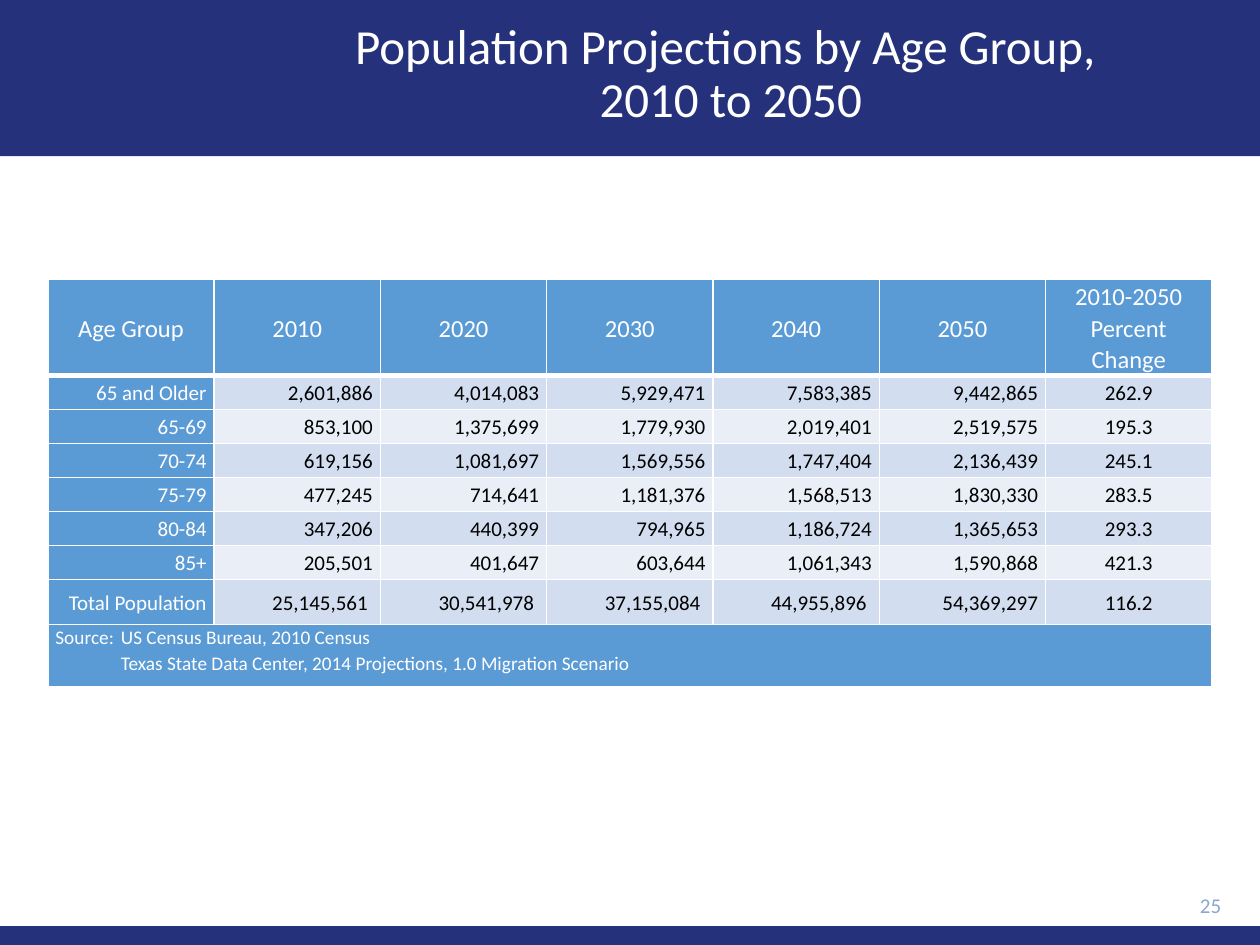
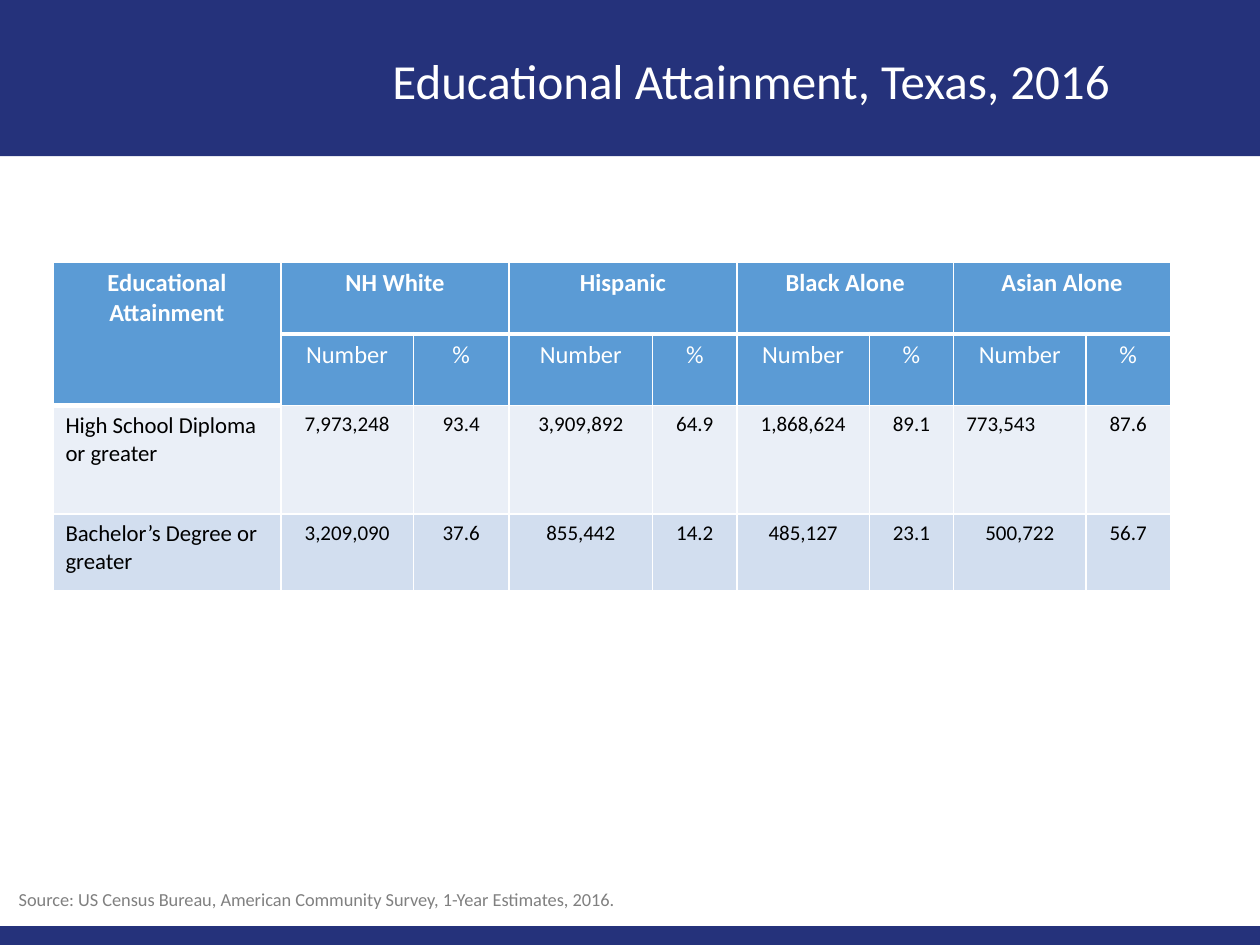
import pptx
import pptx.util
import pptx.dml.color
import pptx.enum.shapes
import pptx.enum.text
import pptx.oxml
import pptx.oxml.ns

Inches = pptx.util.Inches
Pt = pptx.util.Pt
ALIGN = pptx.enum.text.PP_ALIGN
ANCHOR = pptx.enum.text.MSO_ANCHOR

HUES = {
    "navy": "25327B",
    "blue": "5B9BD5",
    "dark": "D2DEEF",
    "light": "EAEFF7",
    "white": "FFFFFF",
    "black": "000000",
    "pale": "8FA5D1",
    "gray": "808080",
}
SIZE = (10, 7.5)
BANDS = [(0, 0, 10, 1.24), (0, 7.35, 10, 0.15)]
TITLE = {"size": 28, "hue": "white", "align": ALIGN.CENTER, "space": 0.9}

AGES = [
    ["Age Group", "2010", "2020", "2030", "2040", "2050", "2010-2050\nPercent Change"],
    ["65 and Older", "2,601,886", "4,014,083", "5,929,471", "7,583,385", "9,442,865", "262.9"],
    ["65-69", "853,100", "1,375,699", "1,779,930", "2,019,401", "2,519,575", "195.3"],
    ["70-74", "619,156", "1,081,697", "1,569,556", "1,747,404", "2,136,439", "245.1"],
    ["75-79", "477,245", "714,641", "1,181,376", "1,568,513", "1,830,330", "283.5"],
    ["80-84", "347,206", "440,399", "794,965", "1,186,724", "1,365,653", "293.3"],
    ["85+", "205,501", "401,647", "603,644", "1,061,343", "1,590,868", "421.3"],
    ["Total Population", "25,145,561", "30,541,978", "37,155,084", "44,955,896",
     "54,369,297", "116.2"],
]
SOURCE = ("Source:\tUS Census Bureau, 2010 Census\n"
          "Texas State Data Center, 2014 Projections, 1.0 Migration Scenario")
GROUPS = ["NH White", "Hispanic", "Black Alone", "Asian Alone"]
GRADES = [
    ["High School Diploma or greater", "7,973,248", "93.4", "3,909,892", "64.9",
     "1,868,624", "89.1", "773,543", "87.6"],
    ["Bachelor’s Degree or greater", "3,209,090", "37.6", "855,442", "14.2",
     "485,127", "23.1", "500,722", "56.7"],
]


def tint(name):
    return pptx.dml.color.RGBColor.from_string(HUES[name])


def apply(item, vals):
    for key, val in vals.items():
        setattr(item, key, val)


def write(frame, text, size, hue, align=ALIGN.LEFT, space=1.0, bold=False):
    frame.text = text
    for para in frame.paragraphs:
        apply(para, {"alignment": align, "line_spacing": space})
        for run in para.runs:
            apply(run.font, {"name": "Calibri", "size": Pt(size), "bold": bold})
            run.font.color.rgb = tint(hue)


def add_text(slide, box, text, form, anchor=ANCHOR.MIDDLE):
    frame = slide.shapes.add_textbox(*map(Inches, box)).text_frame
    apply(frame, {"word_wrap": True, "vertical_anchor": anchor})
    write(frame, text, **form)


def add_frame(deck, title, box):
    slide = deck.slides.add_slide(deck.slide_layouts[6])
    for place in BANDS:
        band = slide.shapes.add_shape(
            pptx.enum.shapes.MSO_SHAPE.RECTANGLE, *map(Inches, place))
        band.shadow.inherit = False
        band.fill.solid()
        band.fill.fore_color.rgb = tint("navy")
        band.line.fill.background()
    add_text(slide, box, title, TITLE)
    return slide


def edge(cell, base):
    props = cell._tc.get_or_add_tcPr()
    for side in "LRTB":
        width = Pt(base if side == "B" else 1)
        props.append(pptx.oxml.parse_xml(
            f'<a:ln{side} {pptx.oxml.ns.nsdecls("a")} w="{width}"><a:solidFill>'
            f'<a:srgbClr val="{HUES["white"]}"/></a:solidFill></a:ln{side}>'))


def add_grid(slide, box, cols, rows, margin):
    left, top = box
    spot = map(Inches, (left, top, sum(cols), sum(rows)))
    table = slide.shapes.add_table(len(rows), len(cols), *spot).table
    apply(table, {"first_row": False, "horz_banding": False})
    for col, width in zip(table.columns, cols):
        col.width = Inches(width)
    for row, height in zip(table.rows, rows):
        row.height = Inches(height)
    for num, row in enumerate(table.rows):
        for cell in row.cells:
            apply(cell, margin)
            edge(cell, 1 if num else 3)
    return table


def paint(cell, name):
    cell.fill.solid()
    cell.fill.fore_color.rgb = tint(name)


def indent(frame, gap):
    first, second = frame.paragraphs
    tabs = (f'<a:tabLst {pptx.oxml.ns.nsdecls("a")}>'
            f'<a:tab pos="{gap}" algn="l"/></a:tabLst>')
    first._p.get_or_add_pPr().append(pptx.oxml.parse_xml(tabs))
    second._p.get_or_add_pPr().set("marL", str(gap))


def add_ages(slide, box):
    margin = {"margin_left": Inches(0.06), "margin_right": Inches(0.06),
              "margin_top": 0, "margin_bottom": 0,
              "vertical_anchor": ANCHOR.MIDDLE}
    rows = [0.76] + [0.27] * 6 + [0.36, 0.49]
    table = add_grid(slide, box, [1.32] * 7, rows, margin)
    for row, vals in enumerate(AGES):
        for col, text in enumerate(vals):
            cell = table.cell(row, col)
            head = row == 0 or col == 0
            paint(cell, "blue" if head else "dark" if row % 2 else "light")
            write(cell.text_frame, text, 12 if row else 14,
                  "white" if head else "black",
                  ALIGN.CENTER if row == 0 or col == 6 else ALIGN.RIGHT, 1.07)
    for col in range(1, 5):
        table.cell(7, col).margin_right = Inches(0.1)
    foot = table.cell(8, 0)
    foot.merge(table.cell(8, 6))
    foot.vertical_anchor = ANCHOR.TOP
    paint(foot, "blue")
    write(foot.text_frame, SOURCE, 11, "white", space=1.07)
    indent(foot.text_frame, Inches(0.52))


def add_grades(slide, box):
    cols = [1.81, 1.05, 0.76, 1.14, 0.67, 1.05, 0.67, 1.05, 0.67]
    table = add_grid(slide, box, cols, [0.57, 0.57, 0.86, 0.61], {})
    head = {"size": 14, "hue": "white", "align": ALIGN.CENTER}
    for row in range(2):
        for col in range(9):
            paint(table.cell(row, col), "blue")
    table.cell(0, 0).merge(table.cell(1, 0))
    write(table.cell(0, 0).text_frame, "Educational Attainment", bold=True, **head)
    for num, group in enumerate(GROUPS):
        col = 1 + 2 * num
        table.cell(0, col).merge(table.cell(0, col + 1))
        write(table.cell(0, col).text_frame, group, bold=True, **head)
        for step, label in enumerate(["Number", "%"]):
            write(table.cell(1, col + step).text_frame, label, **head)
    for row, vals in enumerate(GRADES, 2):
        for col, text in enumerate(vals):
            cell = table.cell(row, col)
            paint(cell, "dark" if row % 2 else "light")
            write(cell.text_frame, text, 12 if col else 13, "black",
                  ALIGN.CENTER if col else ALIGN.LEFT)
    table.cell(2, 7).text_frame.paragraphs[0].alignment = ALIGN.LEFT


def main():
    deck = pptx.Presentation()
    deck.slide_width, deck.slide_height = map(Inches, SIZE)

    slide = add_frame(deck, "Population Projections by Age Group, \v2010 to 2050",
                      (1.7, 0.1, 8.2, 1))
    add_ages(slide, (0.38, 2.22))
    add_text(slide, (8.9, 7.01, 0.89, 0.34), "25",
             {"size": 12, "hue": "pale", "align": ALIGN.RIGHT})

    slide = add_frame(deck, "Educational Attainment, Texas, 2016",
                      (1.92, 0, 8.08, 1.33))
    add_grades(slide, (0.42, 2.08))
    add_text(slide, (0.05, 7, 9.22, 0.29),
             "Source: US Census Bureau, American Community Survey, 1-Year Estimates, 2016.",
             {"size": 10.5, "hue": "gray"}, ANCHOR.TOP)

    deck.save("out.pptx")


if __name__ == "__main__":
    main()
